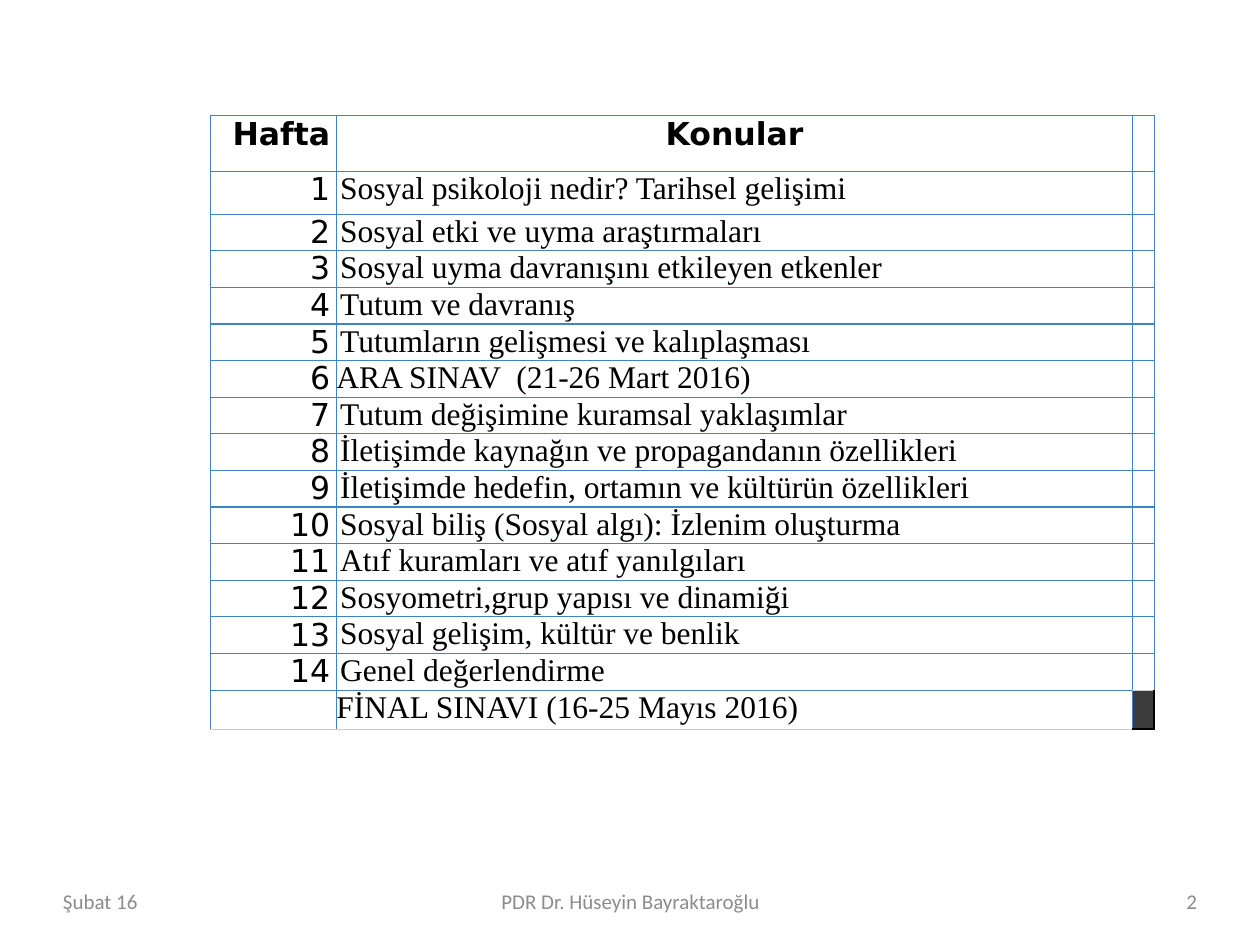
from lxml.etree import SubElement
from pptx import Presentation
from pptx.dml.color import RGBColor
from pptx.enum.text import MSO_ANCHOR, PP_ALIGN
from pptx.oxml.ns import qn
from pptx.util import Inches, Pt

BLUE, GREY, DARK = "4183C1", "CCCCCC", "3B3B3A"
TOPICS = [
    "Sosyal psikoloji nedir? Tarihsel gelişimi",
    "Sosyal etki ve uyma araştırmaları",
    "Sosyal uyma davranışını etkileyen etkenler",
    "Tutum ve davranış",
    "Tutumların gelişmesi ve kalıplaşması",
    "ARA SINAV  (21-26 Mart 2016)",
    "Tutum değişimine kuramsal yaklaşımlar",
    "İletişimde kaynağın ve propagandanın özellikleri",
    "İletişimde hedefin, ortamın ve kültürün özellikleri",
    "Sosyal biliş (Sosyal algı): İzlenim oluşturma",
    "Atıf kuramları ve atıf yanılgıları",
    "Sosyometri,grup yapısı ve dinamiği",
    "Sosyal gelişim, kültür ve benlik",
    "Genel değerlendirme",
    "FİNAL SINAVI (16-25 Mayıs 2016)",
]


def paint(code):
    return RGBColor.from_string(code)


def write(frame, text, font="Calibri", size=18, color="000000", bold=False,
          align=PP_ALIGN.LEFT, before=0):
    para = frame.paragraphs[0]
    para.alignment = align
    para.space_before = Pt(before)
    run = para.add_run()
    run.text = text
    run.font.name = font
    run.font.size = Pt(size)
    run.font.bold = bold
    run.font.color.rgb = paint(color)


class Deck:
    """Holds the style and the current slide."""

    sans, serif = "DejaVu Sans", "Times New Roman"

    def __init__(self):
        self.file = Presentation()
        self.file.slide_width, self.file.slide_height = Inches(10), Inches(7.5)
        self.slide = self.file.slides.add_slide(self.file.slide_layouts[6])

    def note(self, text, left, width, align):
        box = self.slide.shapes.add_textbox(
            Inches(left), Inches(6.95), Inches(width), Inches(0.4))
        frame = box.text_frame
        frame.word_wrap = True
        frame.vertical_anchor = MSO_ANCHOR.MIDDLE
        frame.margin_left = frame.margin_right = 0
        frame.margin_top = frame.margin_bottom = 0
        write(frame, text, size=12, color="8C8C8C", align=align)

    def grid(self, left, top, cols, rows):
        shape = self.slide.shapes.add_table(
            len(rows), len(cols), Inches(left), Inches(top),
            Inches(sum(cols)), Inches(sum(rows)))
        table = shape.table
        table.first_row = table.horz_banding = False
        for col, width in zip(table.columns, cols):
            col.width = Inches(width)
        for row, height in zip(table.rows, rows):
            row.height = Inches(height)
        return table

    def edge(self, cell, side, color, width=0.75):
        line = SubElement(cell._tc.get_or_add_tcPr(), qn("a:ln" + side),
                          w=str(Pt(width)))
        fill = SubElement(line, qn("a:solidFill"))
        SubElement(fill, qn("a:srgbClr"), val=color)

    def cell(self, cell, text="", fill="FFFFFF", edges=None, left=0, right=0,
             **style):
        cell.margin_top = cell.margin_bottom = 0
        cell.margin_left, cell.margin_right = Inches(left), Inches(right)
        for side in "LRTB":
            self.edge(cell, side, *(edges or {}).get(side, (BLUE,)))
        cell.fill.solid()
        cell.fill.fore_color.rgb = paint(fill)
        if text:
            write(cell.text_frame, text, **style)
        else:
            para = cell.text_frame.paragraphs[0]
            SubElement(para._p, qn("a:endParaRPr"), sz="1000")


def main():
    deck = Deck()
    last = len(TOPICS)
    heights = [0.44, 0.34] + [0.29] * (last - 2) + [0.31]
    table = deck.grid(1.67, 0.92, [1, 6.32, 0.17], heights)

    head = dict(font=deck.sans, bold=True, before=8.1)
    deck.cell(table.cell(0, 0), "Hafta", right=0.05, align=PP_ALIGN.RIGHT, **head)
    deck.cell(table.cell(0, 1), "Konular", align=PP_ALIGN.CENTER, **head)
    deck.cell(table.cell(0, 2))

    base = {"B": (GREY,)}
    for week, topic in enumerate(TOPICS, 1):
        final = week == last
        exam = "SINAV" in topic
        gap = 4.5 if week == 1 else 1.9
        edges = base if final else None
        deck.cell(table.cell(week, 0), "" if final else str(week), edges=edges,
                  right=0.05, font=deck.sans, align=PP_ALIGN.RIGHT, before=gap)
        deck.cell(table.cell(week, 1), topic, edges=edges, font=deck.serif,
                  left=0 if exam else 0.03, before=0 if exam else gap)
        if final:
            black = ("000000", 1)
            deck.cell(table.cell(week, 2), fill=DARK,
                      edges={"T": (GREY,), "R": black, "B": black})
        else:
            deck.cell(table.cell(week, 2),
                      edges=base if week == last - 1 else None)

    deck.note("PDR Dr. Hüseyin Bayraktaroğlu", 3.42, 3.17, PP_ALIGN.CENTER)
    deck.note("2", 7.17, 2.33, PP_ALIGN.RIGHT)
    deck.note("Şubat 16", 0.5, 2.33, PP_ALIGN.LEFT)
    deck.file.save("out.pptx")


if __name__ == "__main__":
    main()
